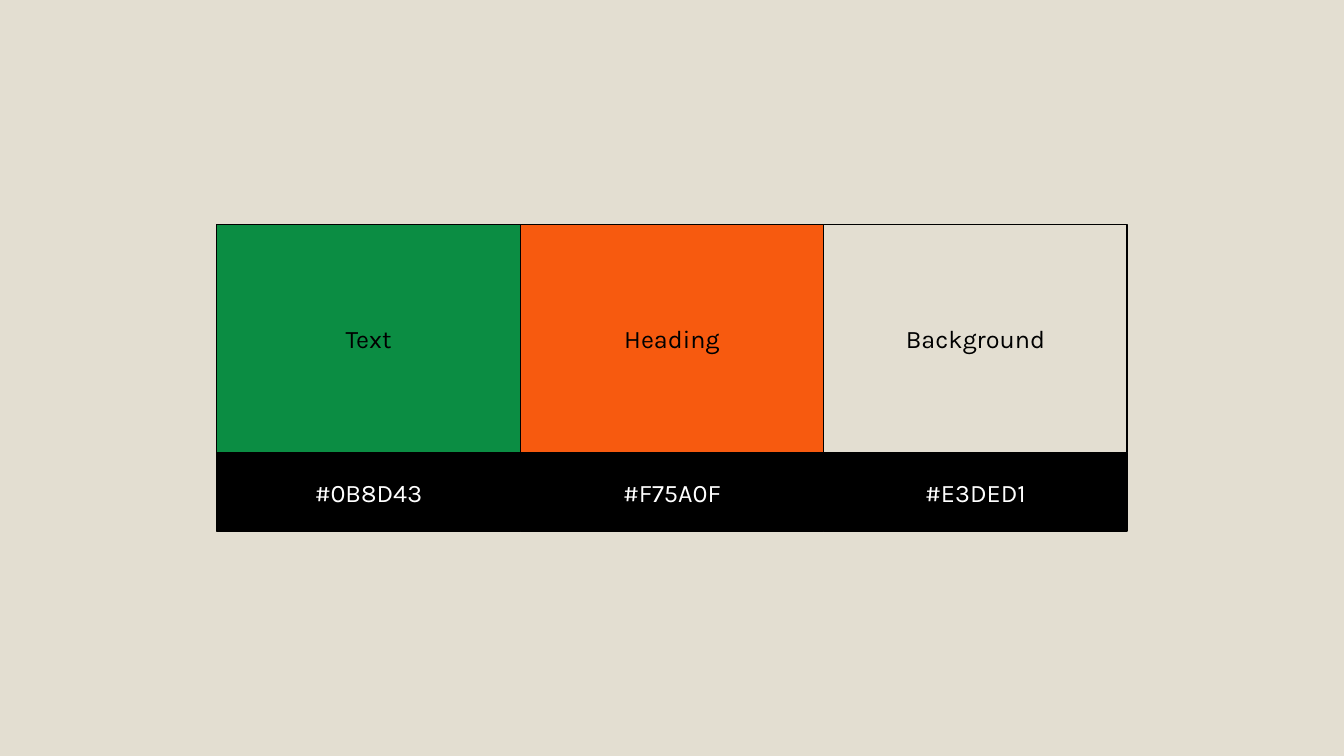
from dataclasses import dataclass

from pptx import Presentation
from pptx.dml.color import RGBColor
from pptx.enum.shapes import MSO_SHAPE
from pptx.enum.text import MSO_ANCHOR, PP_ALIGN
from pptx.slide import Slide
from pptx.util import Inches, Pt

BLACK = RGBColor(0x00, 0x00, 0x00)
WHITE = RGBColor(0xFF, 0xFF, 0xFF)
GREEN = RGBColor(0x0B, 0x8D, 0x43)
ORANGE = RGBColor(0xF7, 0x5A, 0x0F)
BEIGE = RGBColor(0xE3, 0xDE, 0xD1)

FONT = "Karla"
LEFT, TOP = 2.15, 2.23
SWATCH_W, SWATCH_H, CODE_H = 3.01, 2.26, 0.78


@dataclass
class Swatch:
    role: str
    color: RGBColor


SWATCHES = [
    Swatch("Text", GREEN),
    Swatch("Heading", ORANGE),
    Swatch("Background", BEIGE),
]


def add_box(s: Slide, left: float, top: float, height: float,
            text: str, fill: RGBColor, text_color: RGBColor) -> None:
    sp = s.shapes.add_shape(MSO_SHAPE.RECTANGLE, Inches(left), Inches(top),
                            Inches(SWATCH_W), Inches(height))
    sp.shadow.inherit = False
    sp.fill.solid()
    sp.fill.fore_color.rgb = fill
    sp.line.color.rgb = BLACK
    sp.line.width = Pt(1)
    tf = sp.text_frame
    tf.vertical_anchor = MSO_ANCHOR.MIDDLE
    p = tf.paragraphs[0]
    p.text = text
    p.alignment = PP_ALIGN.CENTER
    p.font.name = FONT
    p.font.size = Pt(18)
    p.font.color.rgb = text_color


def add_swatch(s: Slide, swatch: Swatch, left: float) -> None:
    """Draw the colour field over the black box with its hex code."""
    add_box(s, left, TOP + SWATCH_H, CODE_H, f"#{swatch.color}", BLACK, WHITE)
    add_box(s, left, TOP, SWATCH_H, swatch.role, swatch.color, BLACK)


def main() -> None:
    prs = Presentation()
    prs.slide_width = Inches(13.33)
    prs.slide_height = Inches(7.5)
    s = prs.slides.add_slide(prs.slide_layouts[6])
    s.background.fill.solid()
    s.background.fill.fore_color.rgb = BEIGE
    # Right to left, so each swatch overlaps the border of the next one
    for i, swatch in reversed(list(enumerate(SWATCHES))):
        add_swatch(s, swatch, LEFT + i * SWATCH_W)
    prs.save("out.pptx")


if __name__ == "__main__":
    main()
